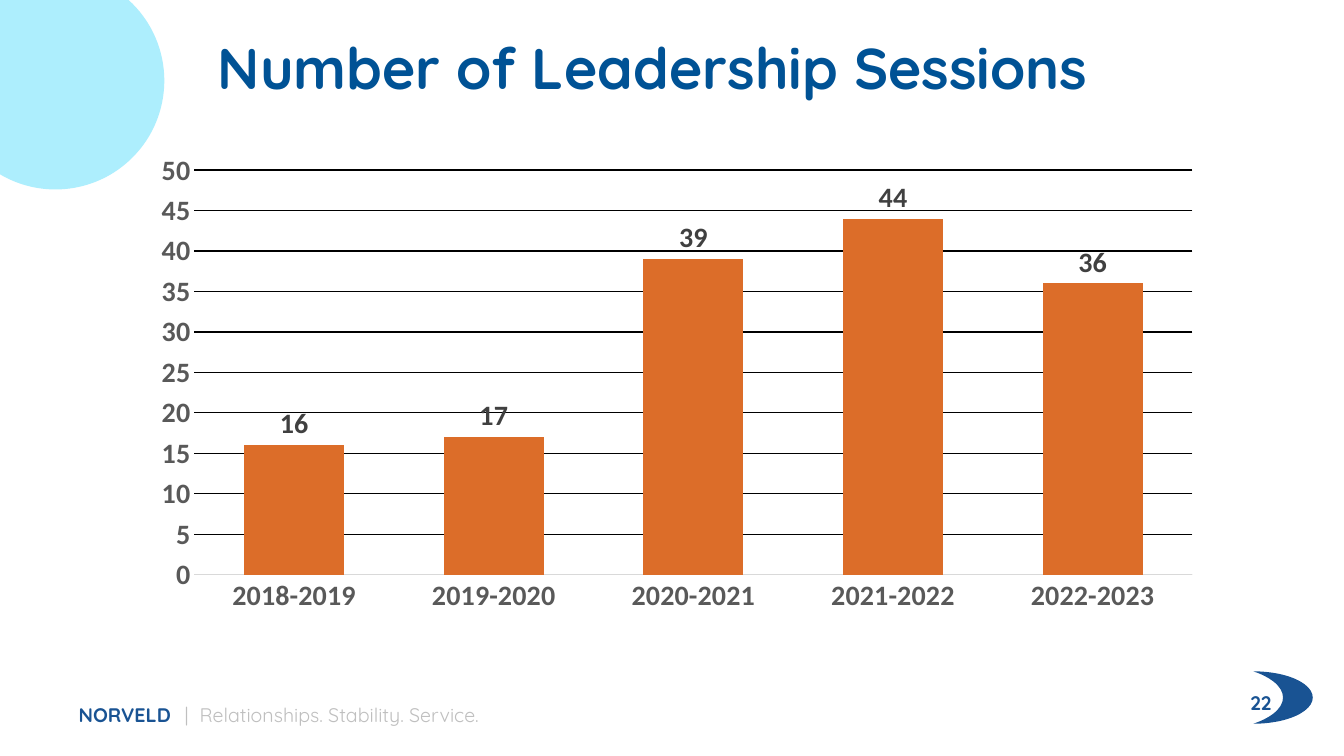
from pptx import Presentation
from pptx.chart.data import CategoryChartData
from pptx.dml.color import RGBColor
from pptx.enum.chart import XL_CHART_TYPE, XL_LABEL_POSITION, XL_TICK_MARK
from pptx.enum.shapes import MSO_SHAPE
from pptx.enum.text import MSO_ANCHOR, PP_ALIGN
from pptx.oxml.ns import qn
from pptx.util import Inches, Pt
from lxml.etree import SubElement

NAVY, BLUE, SKY, ORANGE = "195393", "005295", "ADEEFD", "DC6D29"


def style(font, size, color, bold=True, name="Quicksand"):
    font.name, font.size, font.bold = name, Pt(size), bold
    font.color.rgb = RGBColor.from_string(color)


def place(left, top, width, height):
    return [Inches(n) for n in (left, top, width, height)]


deck = Presentation()
deck.slide_width, deck.slide_height = Inches(13.33), Inches(7.5)
slide = deck.slides.add_slide(deck.slide_layouts[5])
shapes = slide.shapes

# Corner circle and page mark
for kind, box, color, turn in [
    (MSO_SHAPE.OVAL, (-0.53, -0.28, 2.16, 2.16), SKY, 0),
    (MSO_SHAPE.MOON, (12.43, 6.66, 0.59, 0.52), NAVY, 180),
]:
    mark = shapes.add_shape(kind, *place(*box))
    mark.shadow.inherit = False
    mark.fill.solid()
    mark.fill.fore_color.rgb = RGBColor.from_string(color)
    mark.line.fill.background()
    mark.rotation = turn

# Title
title = shapes.title
title.left, title.top, title.width, title.height = place(0.73, 0.34, 11.5, 0.72)
title.text_frame.text = "Number of Leadership Sessions"
title.text_frame.vertical_anchor = MSO_ANCHOR.MIDDLE
head = title.text_frame.paragraphs[0]
head.alignment, head.line_spacing = PP_ALIGN.CENTER, 0.9
style(head.runs[0].font, 41, BLUE)

# Footer, spaced by tab stops, and page number
for box, runs, align, pad, space, stops in [
    ((0.73, 6.99, 5.59, 0.26),
     [("NORVELD", NAVY, True),
      ("\t|\tRelationships. Stability. Service.", "BFBFBF", False)],
     PP_ALIGN.LEFT, 0.05, 0.68, (1.05, 1.2)),
    ((9.71, 6.83, 3, 0.31), [("22", NAVY, True)], PP_ALIGN.RIGHT, 0.1, 0.9, ()),
]:
    label = shapes.add_textbox(*place(*box))
    frame = label.text_frame
    frame.word_wrap = True
    frame.vertical_anchor = MSO_ANCHOR.BOTTOM
    frame.margin_left = frame.margin_right = Inches(pad)
    frame.margin_top = frame.margin_bottom = Inches(0.05)
    para = frame.paragraphs[0]
    para.alignment, para.line_spacing = align, space
    if stops:
        label.fill.solid()
        label.fill.fore_color.rgb = RGBColor.from_string("FFFFFF")
        tabs = SubElement(para._p.get_or_add_pPr(), qn("a:tabLst"))
        for stop in stops:
            SubElement(tabs, qn("a:tab"), pos=str(Inches(stop)), algn="l")
    for text, color, bold in runs:
        run = para.add_run()
        run.text = text
        style(run.font, 14, color, bold)

# Column chart
data = CategoryChartData()
data.categories = [f"{year}-{year + 1}" for year in range(2018, 2023)]
data.add_series("Series 1", (16, 17, 39, 44, 36))
chart = shapes.add_chart(
    XL_CHART_TYPE.COLUMN_CLUSTERED, *place(1.39, 1.42, 10.65, 4.76), data).chart
chart.has_legend = chart.has_title = False
style(chart.font, 10, "000000", False, "Calibri")

# Bars and their labels
plot = chart.plots[0]
plot.gap_width, plot.overlap, plot.vary_by_categories = 100, -27, False
bars = plot.series[0]
bars.format.fill.solid()
bars.format.fill.fore_color.rgb = RGBColor.from_string(ORANGE)
labels = bars.data_labels
labels.show_value = True
labels.position = XL_LABEL_POSITION.OUTSIDE_END
style(labels.font, 20, "404040", name="Calibri")

# Axes
years, count = chart.category_axis, chart.value_axis
for axis in (years, count):
    axis.major_tick_mark = axis.minor_tick_mark = XL_TICK_MARK.NONE
    style(axis.tick_labels.font, 20, "595959", name="Calibri")
count.minimum_scale, count.maximum_scale, count.major_unit = 0, 50, 5
count.format.line.fill.background()
grid = count.major_gridlines.format.line
for line, color, width in [(years.format.line, "D9D9D9", 0.75), (grid, "000000", 1)]:
    line.color.rgb = RGBColor.from_string(color)
    line.width = Pt(width)

deck.save("out.pptx")
